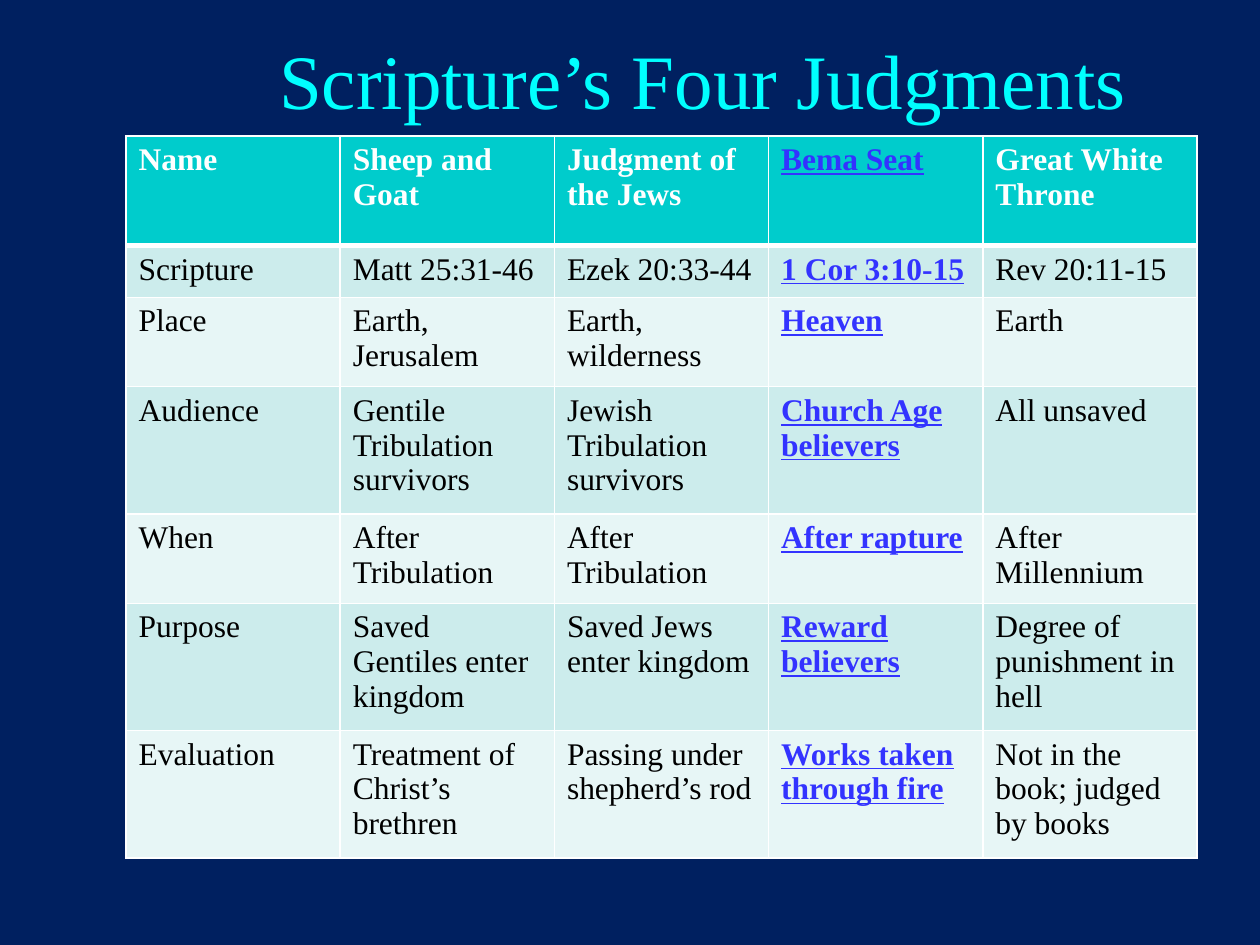
import pptx
import pptx.dml.color
import pptx.enum.text
import pptx.oxml
import pptx.oxml.ns
import pptx.util

Inches = pptx.util.Inches
FONT = "Times New Roman"
HIGHLIGHT_COLUMN = 3


def rgb(value):
    return pptx.dml.color.RGBColor.from_string(value)


def add_border(cell, side, points):
    """Draw a white line on one side (L, R, T or B) of a cell."""
    line = pptx.oxml.parse_xml(
        f'<a:ln{side} {pptx.oxml.ns.nsdecls("a")} w="{pptx.util.Pt(points)}">'
        '<a:solidFill><a:srgbClr val="FFFFFF"/></a:solidFill>'
        f'</a:ln{side}>')
    cell._tc.get_or_add_tcPr().append(line)


deck = pptx.Presentation()
deck.slide_width = Inches(10)
deck.slide_height = Inches(7.5)
page = deck.slides.add_slide(deck.slide_layouts[5])
page.background.fill.solid()
page.background.fill.fore_color.rgb = rgb("002060")

# Title
title = page.shapes.title
title.left, title.top = Inches(1.33), Inches(0)
title.width, title.height = Inches(8.5), Inches(1.25)
title.text_frame.text = "Scripture’s Four Judgments"
title.text_frame.vertical_anchor = pptx.enum.text.MSO_ANCHOR.MIDDLE
para = title.text_frame.paragraphs[0]
para.alignment = pptx.enum.text.PP_ALIGN.CENTER
span = para.runs[0]
span.font.name = FONT
span.font.size = pptx.util.Pt(44)
span.font.color.rgb = rgb("00FFFF")

# Table contents
rows = [
    ["Name", "Sheep and Goat", "Judgment of the Jews", "Bema Seat",
     "Great White Throne"],
    ["Scripture", "Matt 25:31-46", "Ezek 20:33-44", "1 Cor 3:10-15",
     "Rev 20:11-15"],
    ["Place", "Earth, Jerusalem", "Earth, wilderness", "Heaven", "Earth"],
    ["Audience", "Gentile Tribulation survivors",
     "Jewish Tribulation survivors", "Church Age believers", "All unsaved"],
    ["When", "After Tribulation", "After Tribulation", "After rapture",
     "After Millennium"],
    ["Purpose", "Saved Gentiles enter kingdom", "Saved Jews enter kingdom",
     "Reward believers", "Degree of punishment in hell"],
    ["Evaluation", "Treatment of Christ’s brethren",
     "Passing under shepherd’s rod", "Works taken through fire",
     "Not in the book; judged by books"],
]
row_heights = [0.87, 0.41, 0.71, 1.01, 0.71, 1.01, 1.01]

# Table grid
table = page.shapes.add_table(
    len(rows), len(rows[0]), Inches(1), Inches(1.08),
    Inches(8.5), Inches(sum(row_heights))).table
for column in table.columns:
    column.width = Inches(1.7)
for row, height in zip(table.rows, row_heights):
    row.height = Inches(height)

# Cells: teal header, banded body, one highlighted column
for row_index, texts in enumerate(rows):
    header = row_index == 0
    if header:
        fill = "00CCCC"
    else:
        fill = "CCECEC" if row_index % 2 else "E7F6F6"
    for column_index, text in enumerate(texts):
        highlighted = column_index == HIGHLIGHT_COLUMN
        cell = table.cell(row_index, column_index)
        add_border(cell, "L", 1)
        add_border(cell, "R", 1)
        add_border(cell, "T", 3 if row_index == 1 else 1)
        add_border(cell, "B", 3 if header else 1)
        cell.fill.solid()
        cell.fill.fore_color.rgb = rgb(fill)

        cell.text_frame.text = text
        font = cell.text_frame.paragraphs[0].runs[0].font
        font.name = FONT
        font.size = pptx.util.Pt(18)
        font.bold = header or highlighted
        font.underline = highlighted
        if highlighted:
            font.color.rgb = rgb("3333FF")
        else:
            font.color.rgb = rgb("FFFFFF" if header else "000000")

deck.save("out.pptx")
